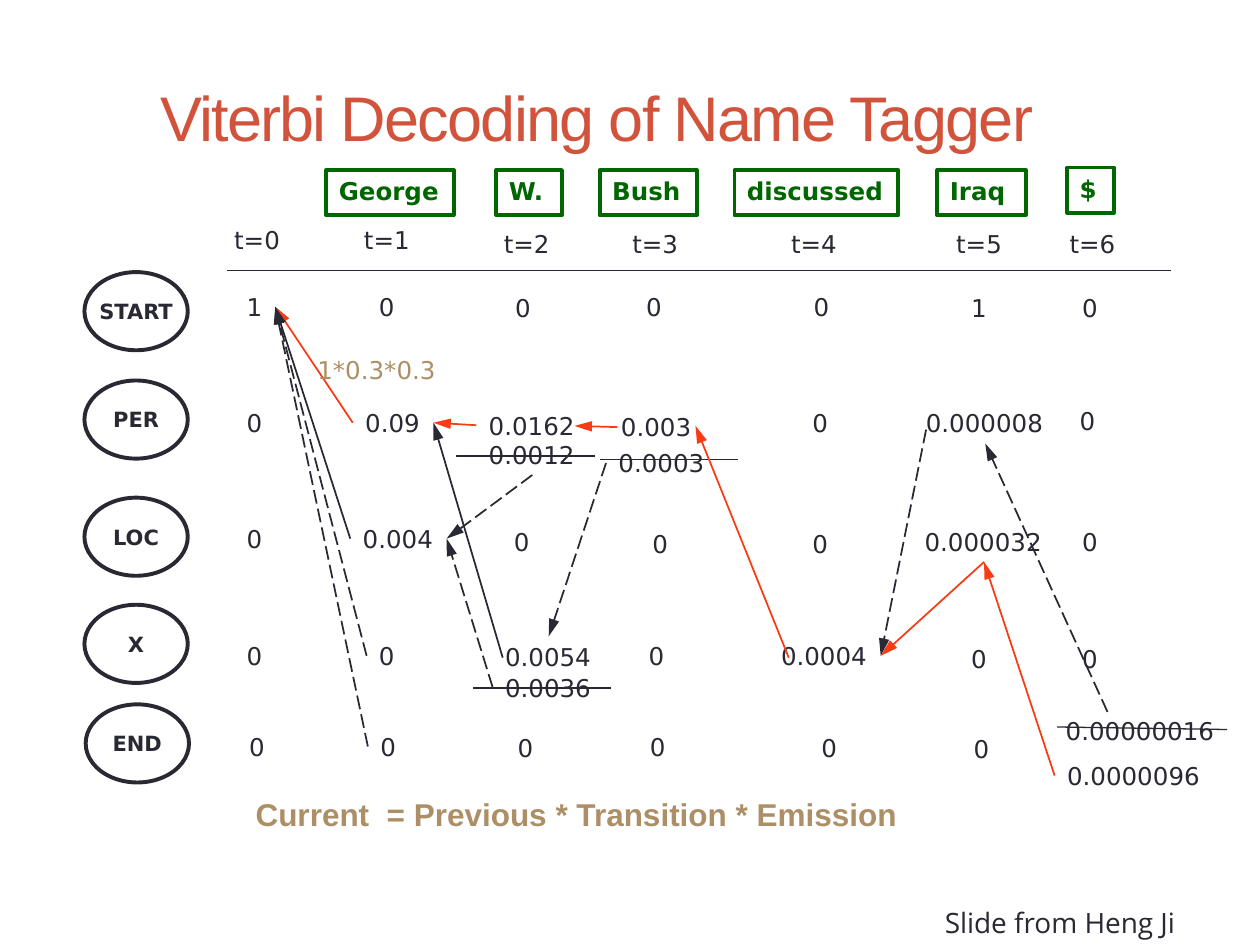
from pptx import Presentation, util as u
from pptx.dml.color import RGBColor
from pptx.enum import dml, shapes, text
from pptx.oxml.ns import qn
from lxml import etree

INK, GREEN, RED, TAN, RUST = "292934", "006600", "F73B15", "AD8F67", "D2533C"
TOP, LEFT, BOTTOM, RIGHT = range(4)
BODY = {"name": "DejaVu Sans", "size": u.Pt(14), "bold": False}
FRAME = {"word_wrap": False, "auto_size": text.MSO_AUTO_SIZE.SHAPE_TO_FIT_TEXT,
         "vertical_anchor": text.MSO_ANCHOR.TOP}

# Words of the sentence: text, left, top, width
WORDS = [("George", 2.59, 1.35, 1.01), ("W.", 3.94, 1.35, 0.52),
         ("Bush", 4.76, 1.35, 0.77), ("discussed", 5.83, 1.35, 1.3),
         ("Iraq", 7.44, 1.35, 0.7), ("$", 8.47, 1.33, 0.37)]
# Time steps: left, top
TIMES = [(1.76, 1.74), (2.79, 1.74), (3.9, 1.77), (4.92, 1.77),
         (6.18, 1.77), (7.49, 1.77), (8.39, 1.77)]
# Tagger states: left, top
STATES = {"START": (0.67, 2.16), "PER": (0.67, 3.02), "LOC": (0.67, 3.95),
          "X": (0.67, 4.8), "END": (0.68, 5.59)}
# Trellis scores by state, one (value, left, top) for each time step
SCORES = {
    "START": [("1", 1.86, 2.27), ("0", 2.91, 2.27), ("0", 3.99, 2.28), ("0", 5.03, 2.27),
              ("0", 6.36, 2.27), ("1", 7.61, 2.28), ("0", 8.49, 2.28)],
    "PER": [("0", 1.86, 3.19), ("0.09", 2.8, 3.19), ("0.0162", 3.78, 3.21),
            ("0.003", 4.83, 3.22), ("0", 6.35, 3.19), ("0.000008", 7.25, 3.19),
            ("0", 8.47, 3.17)],
    "LOC": [("0", 1.86, 4.11), ("0.004", 2.78, 4.11), ("0", 3.98, 4.13), ("0", 5.08, 4.15),
            ("0", 6.35, 4.15), ("0.000032", 7.24, 4.13), ("0", 8.49, 4.13)],
    "X": [("0", 1.86, 5.04), ("0", 2.91, 5.04), ("0.0054", 3.91, 5.05), ("0", 5.05, 5.04),
          ("0.0004", 6.1, 5.04), ("0", 7.61, 5.06), ("0", 8.49, 5.06)],
    "END": [("0", 1.88, 5.76), ("0", 2.92, 5.76), ("0", 4.01, 5.77), ("0", 5.06, 5.76),
            ("0", 6.42, 5.77), ("0", 7.63, 5.78), ("0.0000096", 8.37, 5.99)],
}
# Losing scores that are struck out: state and step, value, left, top, strike line
REJECTED = [("PER", 2, "0.0012", 3.78, 3.44, (4.72, 3.62), (3.62, 3.62)),
            ("PER", 3, "0.0003", 4.81, 3.51, (5.86, 3.65), (4.76, 3.65)),
            ("X", 2, "0.0036", 3.91, 5.29, (4.85, 5.46), (3.75, 5.46)),
            ("END", 6, "0.00000016", 8.36, 5.63, (9.74, 5.79), (8.39, 5.77))]
# Back pointers: an end is a point, or a score key with its side
ORIGIN = ("START0", RIGHT)
POINTERS = [
    (("PER1", LEFT), ORIGIN, RED, False),
    (("LOC1", LEFT), ORIGIN, INK, False),
    (("X1", LEFT), ORIGIN, INK, True),
    (("END1", LEFT), ORIGIN, INK, True),
    (("PER2", LEFT), ("PER1", RIGHT), RED, False),
    ((3.99, 5.22), ("PER1", RIGHT), INK, False),
    (("X2 rejected", LEFT), ("LOC1", RIGHT), INK, True),
    (("PER2 rejected", BOTTOM), ("LOC1", RIGHT), INK, True),
    ((4.9, 3.39), (4.56, 3.38), RED, False),
    (("PER3 rejected", LEFT), ("X2", TOP), INK, True),
    ((6.26, 5.22), (5.52, 3.38), RED, False),
    ((7.35, 3.41), ("X4", RIGHT), INK, True),
    (("LOC5", BOTTOM), ("X4", RIGHT), RED, False),
    (("END6", LEFT), ("LOC5", BOTTOM), RED, False),
    ((8.79, 5.65), ("PER5", BOTTOM), INK, True),
]


def inches(value):
    return u.Cm(value * 2.54)


def rgb(code):
    return RGBColor.from_string(code)


def set_all(target, values):
    for name, value in values.items():
        setattr(target, name, value)


def write(shape, words, color, font=None, frame=None, align=text.PP_ALIGN.LEFT):
    set_all(shape.text_frame, FRAME | (frame or {}))
    paragraph = shape.text_frame.paragraphs[0]
    paragraph.alignment = align
    run = paragraph.add_run()
    run.text = words
    set_all(run.font, BODY | (font or {}))
    run.font.color.rgb = rgb(color)
    return run


def add_label(slide, words, left, top, width, height=0.33, color=INK, **formats):
    label = slide.shapes.add_textbox(*map(inches, (left, top, width, height)))
    write(label, words, color, **formats)
    return label


def add_score(slide, value, left, top):
    # Side insets, an eighth of an inch for each digit, less for the narrow point
    width = 0.2 + len(value) / 8 - 0.06 * value.count(".")
    return add_label(slide, value, left, top, width)


def add_outline(slide, kind, box, words, color, **formats):
    outline = slide.shapes.add_shape(kind, *map(inches, box))
    outline.shadow.inherit = False
    outline.fill.background()
    outline.line.color.rgb = rgb(color)
    outline.line.width = u.Pt(2.25)
    write(outline, words, color, **formats)


def add_line(slide, start, end, color=INK, width=0.75):
    line = slide.shapes.add_connector(shapes.MSO_CONNECTOR.STRAIGHT,
                                      *map(inches, start + end))
    line.line.color.rgb = rgb(color)
    line.line.width = u.Pt(width)
    etree.SubElement(line._element.spPr, qn("a:effectLst"))
    return line


def add_pointer(slide, scores, start, end, color, dashed):
    def point(place):
        return (0, 0) if place[0] in scores else place

    pointer = add_line(slide, point(start), point(end), color, 1)
    for place, join in ((start, pointer.begin_connect), (end, pointer.end_connect)):
        if place[0] in scores:
            join(scores[place[0]], place[1])
    if dashed:
        pointer.line.dash_style = dml.MSO_LINE.LONG_DASH
    etree.SubElement(pointer.line._get_or_add_ln(), qn("a:tailEnd"),
                     type="triangle", w="med", len="lg")


def add_title(slide, words):
    title = slide.shapes.title
    set_all(title, dict(zip(("left", "top", "width", "height"),
                            map(inches, (1.17, 0.3, 9, 1.25)))))
    run = write(title, words, RUST, {"name": "Arial", "size": u.Pt(36)},
                {"word_wrap": True, "auto_size": text.MSO_AUTO_SIZE.NONE,
                 "vertical_anchor": text.MSO_ANCHOR.MIDDLE})
    run.font._element.set("spc", "-100")


def main():
    deck = Presentation()
    deck.slide_width, deck.slide_height = inches(10), inches(7.5)
    slide = deck.slides.add_slide(deck.slide_layouts[5])
    add_title(slide, "Viterbi Decoding of Name Tagger")

    # Sentence, time axis and states
    for word, left, top, width in WORDS:
        add_outline(slide, shapes.MSO_SHAPE.RECTANGLE, (left, top, width, 0.36),
                    word, GREEN, font={"bold": True})
    for step, (left, top) in enumerate(TIMES):
        add_label(slide, f"t={step}", left, top, 0.6)
    add_line(slide, (1.8, 2.15), (9.29, 2.15))
    for state, (left, top) in STATES.items():
        add_outline(slide, shapes.MSO_SHAPE.OVAL, (left, top, 0.82, 0.62), state, INK,
                    font={"size": u.Pt(12), "bold": True},
                    frame={"auto_size": text.MSO_AUTO_SIZE.NONE,
                           "vertical_anchor": text.MSO_ANCHOR.MIDDLE},
                    align=text.PP_ALIGN.CENTER)

    # Trellis scores, struck-out scores and back pointers
    scores = {f"{state}{step}": add_score(slide, *score)
              for state, row in SCORES.items() for step, score in enumerate(row)}
    for state, step, value, left, top, start, end in REJECTED:
        scores[f"{state}{step} rejected"] = add_score(slide, value, left, top)
        add_line(slide, start, end)
    for pointer in POINTERS:
        add_pointer(slide, scores, *pointer)

    # Formula and credit
    add_label(slide, "1*0.3*0.3", 2.42, 2.77, 1.21, color=TAN)
    add_label(slide, "Current  = Previous * Transition * Emission", 1.93, 6.26, 5.51, 0.4,
              TAN, font={"name": "Arial", "size": u.Pt(18), "bold": True},
              frame={"word_wrap": True})
    add_label(slide, "Slide from Heng Ji", 7.4, 7.14, 2.16, 0.37,
              font={"name": "Open Sans", "size": u.Pt(16)})
    deck.save("out.pptx")


if __name__ == "__main__":
    main()
